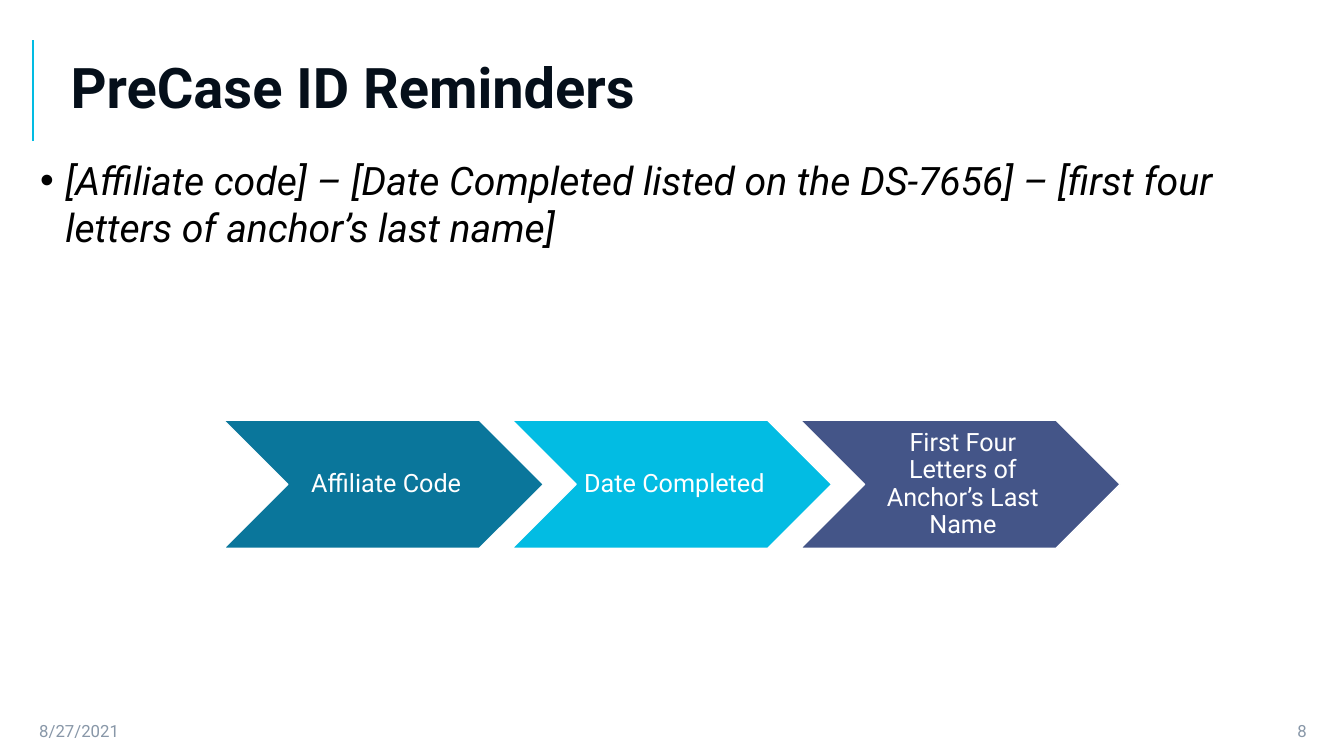
from dataclasses import dataclass

from lxml.etree import SubElement
from pptx import Presentation
from pptx.dml.color import RGBColor
from pptx.enum.shapes import MSO_CONNECTOR, MSO_SHAPE
from pptx.enum.text import MSO_ANCHOR, MSO_AUTO_SIZE, PP_ALIGN
from pptx.oxml.ns import qn
from pptx.shapes.base import BaseShape
from pptx.slide import Slide
from pptx.util import Emu, Pt


@dataclass(frozen=True)
class Theme:
    font: str = "Roboto"
    title: str = "050F1A"
    body: str = "000000"
    footer: str = "8897A8"
    white: str = "FFFFFF"
    teal: str = "0A769B"
    cyan: str = "02BCE3"
    indigo: str = "445588"
    title_size: int = 40
    body_size: int = 28
    step_size: int = 18
    footer_size: int = 12


@dataclass(frozen=True)
class Box:
    left: int
    top: int
    width: int
    height: int


@dataclass(frozen=True)
class Style:
    size: int
    color: str
    bold: bool = False
    italic: bool = False
    align: PP_ALIGN = PP_ALIGN.LEFT
    anchor: MSO_ANCHOR = MSO_ANCHOR.MIDDLE
    spacing: float = 1.0


@dataclass(frozen=True)
class Step:
    text: str
    fill: str


@dataclass(frozen=True)
class Label:
    text: str
    box: Box
    align: PP_ALIGN


THEME = Theme()
EMU_PER_PX = 9144
STEP_BOX = Box(222, 417, 317, 127)
STEP_PITCH = 286
STEP_INSETS = (8, 3, 3, 3)
STEPS = (
    Step("Affiliate Code", THEME.teal),
    Step("Date Completed", THEME.cyan),
    Step("First Four Letters of Anchor’s Last Name", THEME.indigo),
)
FOOTERS = (
    Label("8/27/2021", Box(29, 710, 329, 30), PP_ALIGN.LEFT),
    Label("8", Box(968, 710, 338, 30), PP_ALIGN.RIGHT),
)


def px(n: int) -> Emu:
    return Emu(n * EMU_PER_PX)


def rgb(color: str) -> RGBColor:
    return RGBColor.from_string(color)


def frame(box: Box) -> tuple[Emu, Emu, Emu, Emu]:
    return px(box.left), px(box.top), px(box.width), px(box.height)


def write(sp: BaseShape, text: str, style: Style) -> None:
    tf = sp.text_frame
    tf.word_wrap = True
    tf.auto_size = MSO_AUTO_SIZE.NONE
    tf.vertical_anchor = style.anchor
    p = tf.paragraphs[0]
    p.alignment = style.align
    p.line_spacing = style.spacing
    r = p.add_run()
    r.text = text
    r.font.name = THEME.font
    r.font.size = Pt(style.size)
    r.font.bold = style.bold
    r.font.italic = style.italic
    r.font.color.rgb = rgb(style.color)


def add_title(s: Slide, text: str, box: Box) -> None:
    sp = s.shapes.title
    sp.left, sp.top, sp.width, sp.height = frame(box)
    write(sp, text, Style(THEME.title_size, THEME.title, bold=True, spacing=0.9))


def add_accent(s: Slide, x: int, top: int, bottom: int) -> None:
    line = s.shapes.add_connector(
        MSO_CONNECTOR.STRAIGHT, px(x), px(bottom), px(x), px(top)
    )
    line.line.color.rgb = rgb(THEME.cyan)
    line.line.width = Pt(1.5)
    SubElement(line._element.spPr, qn("a:effectLst"))


def add_bullet(s: Slide, text: str, box: Box) -> None:
    sp = s.shapes.add_textbox(*frame(box))
    write(
        sp,
        text,
        Style(THEME.body_size, THEME.body, italic=True, anchor=MSO_ANCHOR.TOP),
    )
    p = sp.text_frame.paragraphs[0]
    p.space_before = Pt(10)
    pPr = p._p.get_or_add_pPr()
    pPr.set("marL", str(px(25)))
    pPr.set("indent", str(px(-25)))
    SubElement(pPr, qn("a:buFont"), typeface="Arial")
    SubElement(pPr, qn("a:buChar"), char="•")


def add_step(s: Slide, step: Step, box: Box) -> None:
    sp = s.shapes.add_shape(MSO_SHAPE.CHEVRON, *frame(box))
    sp.shadow.inherit = False
    sp.fill.solid()
    sp.fill.fore_color.rgb = rgb(step.fill)
    sp.line.color.rgb = rgb(THEME.white)
    sp.line.width = Pt(1)
    tf = sp.text_frame
    tf.margin_left, tf.margin_top, tf.margin_right, tf.margin_bottom = map(
        px, STEP_INSETS
    )
    style = Style(THEME.step_size, THEME.white, align=PP_ALIGN.CENTER, spacing=0.9)
    write(sp, step.text, style)


def add_footer(s: Slide, label: Label) -> None:
    sp = s.shapes.add_textbox(*frame(label.box))
    write(sp, label.text, Style(THEME.footer_size, THEME.footer, align=label.align))


def main() -> None:
    prs = Presentation()
    prs.slide_width, prs.slide_height = px(1333), px(750)
    s = prs.slides.add_slide(prs.slide_layouts.get_by_name("Title Only"))
    add_accent(s, 33, 40, 140)
    add_title(s, "PreCase ID Reminders", Box(60, 40, 1245, 100))
    add_bullet(
        s,
        "[Affiliate code] – [Date Completed listed on the DS-7656] – "
        "[first four letters of anchor’s last name]",
        Box(30, 150, 1275, 550),
    )
    for i, step in enumerate(STEPS):
        left = STEP_BOX.left + i * STEP_PITCH
        add_step(s, step, Box(left, STEP_BOX.top, STEP_BOX.width, STEP_BOX.height))
    for label in FOOTERS:
        add_footer(s, label)
    prs.save("out.pptx")


if __name__ == "__main__":
    main()
